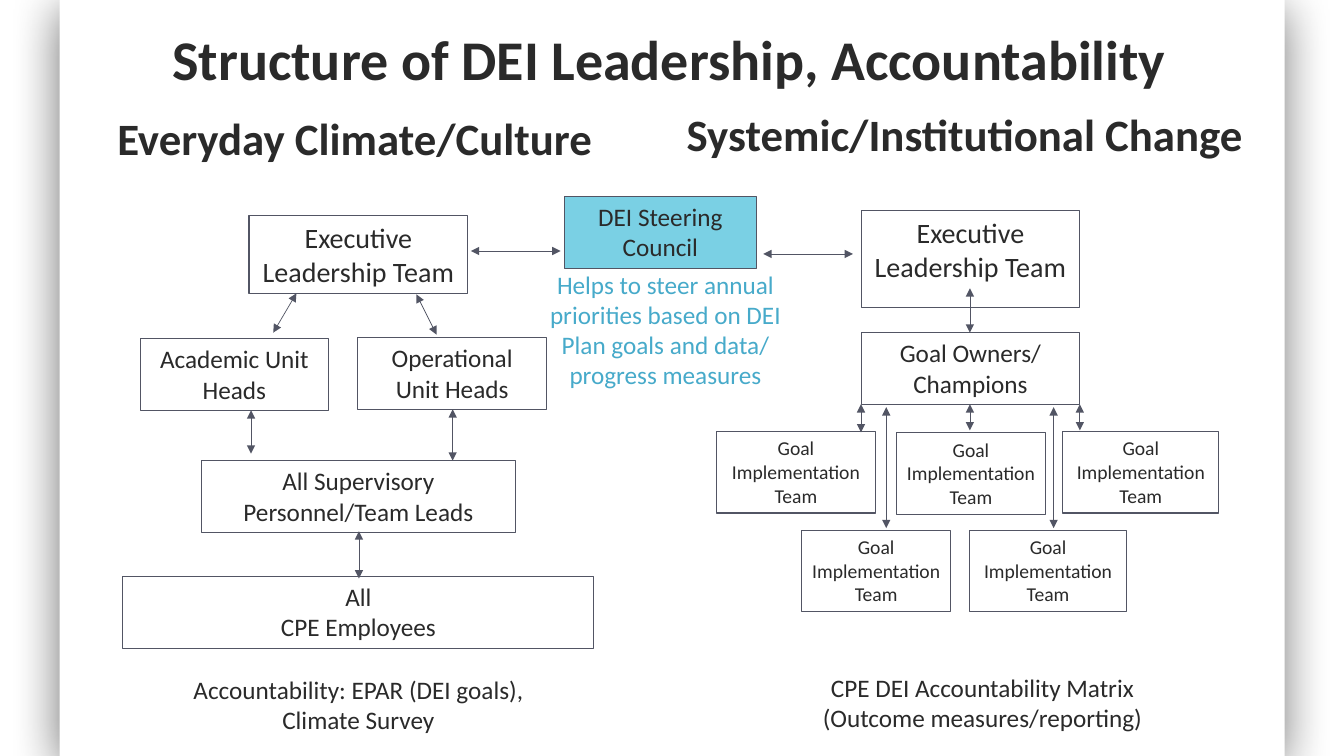
import pptx
import pptx.util
import pptx.dml.color
import pptx.enum.shapes
import pptx.enum.text
import pptx.oxml
import pptx.oxml.ns

RGB = pptx.dml.color.RGBColor
INK = RGB(0x2A, 0x2A, 0x2A)
EDGE = RGB(0x52, 0x55, 0x64)
WHITE = RGB(0xFF, 0xFF, 0xFF)
AQUA = RGB(0x7A, 0xD0, 0xE4)
BLUE = RGB(0x47, 0xAA, 0xCA)
KINDS = pptx.enum.shapes.MSO_SHAPE
MID = pptx.enum.text.MSO_ANCHOR.MIDDLE
TOP = pptx.enum.text.MSO_ANCHOR.TOP
NS = pptx.oxml.ns.nsdecls("a")

# The grid has ten columns and ten rows to the inch.
COLS, ROWS = 133.3, 75
GOAL = "Goal Implementation Team"
EXEC = "Executive Leadership Team"


def cell(n):
    """Turn grid cells into a length."""
    return pptx.util.Inches(n / 10)


def place(box, x, y, w, h):
    """Return grid lengths shifted to the region's corner."""
    return cell(box[0] + x), cell(box[1] + y), cell(w), cell(h)


def write(frame, text, size, color=INK, bold=False, anchor=TOP, lead=None):
    frame.word_wrap = True
    frame.vertical_anchor = anchor
    for i, line in enumerate(text.split("\n")):
        para = frame.add_paragraph() if i else frame.paragraphs[0]
        para.alignment = pptx.enum.text.PP_ALIGN.CENTER
        para.line_spacing = lead
        run = para.add_run()
        run.text = line
        font = run.font
        font.name = "Calibri"
        font.size = pptx.util.Pt(size)
        font.bold = bold
        font.color.rgb = color


def label(slide, box, spot, text, size=18, **look):
    area = slide.shapes.add_textbox(*place(box, *spot))
    write(area.text_frame, text, size, **look)


def head(slide, box, spot, text, size):
    label(slide, box, spot, text, size, bold=True, anchor=MID, lead=0.9)


def node(slide, box, spot, text, size=18, fill=None):
    """Draw a framed box with centred text."""
    shape = slide.shapes.add_shape(KINDS.RECTANGLE, *place(box, *spot))
    shape.shadow.inherit = False
    if fill is None:
        shape.fill.background()
    else:
        shape.fill.solid()
        shape.fill.fore_color.rgb = fill
    shape.line.color.rgb = EDGE
    shape.line.width = pptx.util.Pt(0.75)
    write(shape.text_frame, text, size)


def arrow(slide, box, x1, y1, x2, y2):
    """Draw a line with a head at each end."""
    start = place(box, x1, y1, 0, 0)[:2]
    end = place(box, x2, y2, 0, 0)[:2]
    kind = pptx.enum.shapes.MSO_CONNECTOR.STRAIGHT
    link = slide.shapes.add_connector(kind, *start, *end)
    link.line.color.rgb = EDGE
    link.line.width = pptx.util.Pt(0.5)
    line = link.line._get_or_add_ln()
    for tag in ("headEnd", "tailEnd"):
        line.append(pptx.oxml.parse_xml(f'<a:{tag} {NS} type="triangle"/>'))
    link._element.spPr.append(pptx.oxml.parse_xml(f"<a:effectLst {NS}/>"))


def panel(slide, box):
    """Draw the white sheet with its soft shadow."""
    shape = slide.shapes.add_shape(KINDS.SNIP_2_DIAG_RECTANGLE, *place(box, 0, 0, *box[2:]))
    shape.adjustments[0] = shape.adjustments[1] = 0
    shape.fill.solid()
    shape.fill.fore_color.rgb = WHITE
    shape.line.fill.background()
    blur, dist = pptx.util.Pt(35), pptx.util.Pt(7)
    shape._element.spPr.append(pptx.oxml.parse_xml(
        f'<a:effectLst {NS}><a:outerShdw blurRad="{blur}" dist="{dist}" '
        'dir="5400000" algn="ctr" rotWithShape="0"><a:srgbClr val="000000">'
        '<a:alpha val="55000"/></a:srgbClr></a:outerShdw></a:effectLst>'))


def climate(slide, box):
    head(slide, box, (0, 0, box[2], 5.2), "Everyday Climate/Culture", 32)
    node(slide, box, (18.5, 10, 21.7, 7.7), EXEC, 20)
    for spot, text in (
        ((7.7, 22.2, 18.7, 7.1), "Academic Unit Heads"),
        ((29.3, 22.1, 18.7, 7.1), "Operational Unit Heads"),
        ((13.8, 34.3, 31.1, 7.1), "All Supervisory Personnel/Team Leads"),
        ((6, 45.8, 46.7, 7.1), "All\nCPE Employees"),
    ):
        node(slide, box, spot, text)
    for ends in (
        (23.2, 17.7, 20.9, 21.6),
        (35.1, 17.8, 37.1, 21.8),
        (18.7, 29.3, 18.7, 33.6),
        (38.7, 29.2, 38.7, 34.3),
        (29.4, 41.3, 29.4, 46),
    ):
        arrow(slide, box, *ends)
    label(slide, box, (8.5, 55, 41.7, 7.1),
          "Accountability: EPAR (DEI goals), Climate Survey")


def change(slide, box):
    head(slide, box, (0, 0, box[2], 5.2), "Systemic/Institutional Change", 32)
    node(slide, box, (18.7, 9.9, 21.7, 9.6), EXEC, 20)
    node(slide, box, (18.7, 22, 21.7, 7.1), "Goal Owners/ Champions")
    for x, y, w in ((4.4, 31.8, 15.7), (22.2, 31.9, 14.8), (38.7, 31.8, 15.5),
                    (12.8, 41.6, 14.8), (29.5, 41.6, 15.5)):
        node(slide, box, (x, y, w, 8.1), GOAL, 14)
    for x, y1, y2 in ((29.5, 17.6, 22), (18.7, 29.1, 31.9), (29.5, 29.1, 31.7),
                      (40.4, 29.1, 31.7), (21.2, 29.4, 41.4), (37.8, 29.4, 41.4)):
        arrow(slide, box, x, y1, x, y2)
    label(slide, box, (9.9, 55.2, 41.7, 7.1),
          "CPE DEI Accountability Matrix\n(Outcome measures/reporting)")


def council(slide, box):
    node(slide, box, (9.3, 0, 19, 7.1), "DEI Steering Council", fill=AQUA)
    for x, y in ((0, 5.4), (29, 5.7)):
        arrow(slide, box, x, y, x + 8.9, y)
    label(slide, box, (5.4, 6.7, 27.8, 13.1),
          "Helps to steer annual priorities based on DEI Plan goals and data/ "
          "progress measures", color=BLUE)


def main():
    deck = pptx.Presentation()
    deck.slide_width, deck.slide_height = cell(COLS), cell(ROWS)
    slide = deck.slides.add_slide(deck.slide_layouts[6])
    panel(slide, (5.9, 0, 121.5, ROWS))
    head(slide, (8.4, 3.4), (0, 0, 115.9, 5.5),
         "Structure of DEI Leadership, Accountability", 40)
    climate(slide, (6.2, 11.4, 58, 62.1))
    change(slide, (66.7, 11, 58, 62.3))
    council(slide, (46.7, 19.5, 37.9, 19.8))
    deck.save("out.pptx")


if __name__ == "__main__":
    main()
